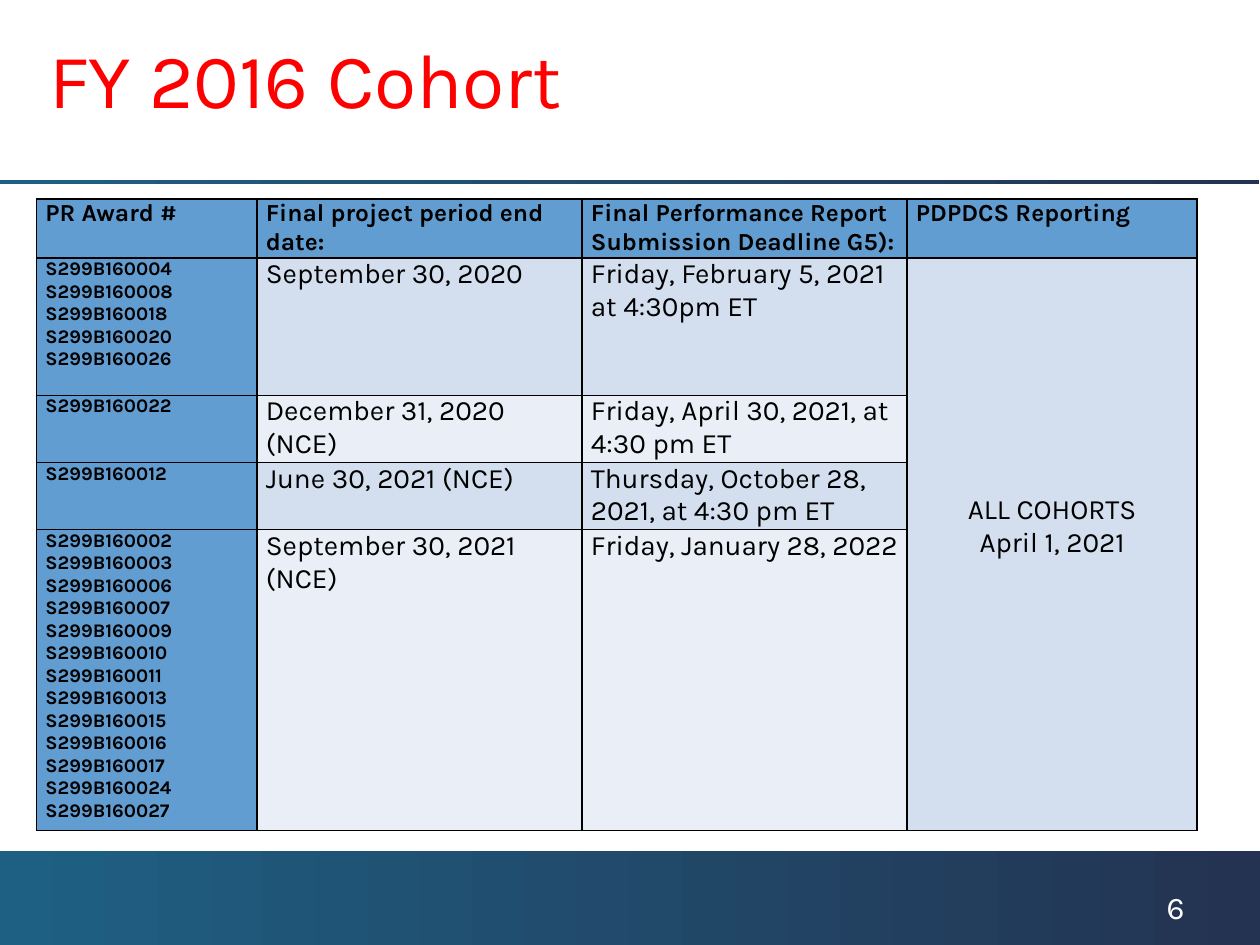
import pptx
import pptx.util
import pptx.dml.color
import pptx.enum.shapes
import pptx.enum.text
import pptx.oxml
import pptx.oxml.ns

Inches, Pt = pptx.util.Inches, pptx.util.Pt
ANCHOR = pptx.enum.text.MSO_ANCHOR
ALIGN = pptx.enum.text.PP_ALIGN

COLORS = {
    "title": "FF0000", "text": "000000", "white": "FFFFFF",
    "teal": "1E6083", "navy": "243352",
    "header": "629DD1", "band_dark": "D3DFEE", "band_light": "EAEFF7",
}


def rgb(name):
    return pptx.dml.color.RGBColor.from_string(COLORS[name])


def awards(*numbers):
    return "\n".join(f"S299B1600{n:02d}" for n in numbers)


class Deck:
    font = "Karla"

    def __init__(self, width, height):
        self.prs = pptx.Presentation()
        self.prs.slide_width, self.prs.slide_height = Inches(width), Inches(height)

    def add_slide(self):
        self.s = self.prs.slides.add_slide(self.prs.slide_layouts[5])

    def set_text(self, tf, text, size, color="text", bold=False, align=ALIGN.LEFT):
        tf.text = text
        tf.word_wrap = True
        for p in tf.paragraphs:
            p.alignment = align
            for r in p.runs:
                r.font.name, r.font.size, r.font.bold = self.font, Pt(size), bold
                r.font.color.rgb = rgb(color)

    def title(self, text, *box):
        sp = self.s.shapes.title
        sp.left, sp.top, sp.width, sp.height = map(Inches, box)
        self.set_text(sp.text_frame, text, 44, "title")
        sp.text_frame.vertical_anchor = ANCHOR.MIDDLE

    def text(self, text, size, color, *box):
        sp = self.s.shapes.add_textbox(*map(Inches, box))
        self.set_text(sp.text_frame, text, size, color)

    def gradient_bar(self, *box):
        sp = self.s.shapes.add_shape(
            pptx.enum.shapes.MSO_SHAPE.RECTANGLE, *map(Inches, box))
        sp.shadow.inherit = False
        sp.line.fill.background()
        sp.fill.gradient()
        sp.fill.gradient_angle = 0
        for stop, name in zip(sp.fill.gradient_stops, ("teal", "navy")):
            stop.color.rgb = rgb(name)

    def table(self, left, top, cols, rows):
        frame = self.s.shapes.add_table(
            len(rows), len(cols), Inches(left), Inches(top),
            Inches(sum(cols)), Inches(sum(rows)))
        table = frame.table
        table.horz_banding = False
        for column, width in zip(table.columns, cols):
            column.width = Inches(width)
        for row, height in zip(table.rows, rows):
            row.height = Inches(height)
        return table

    def cell(self, cell, text, size, fill, bold=False, align=ALIGN.LEFT):
        cell.margin_left = cell.margin_right = Inches(0.07)
        cell.margin_top = cell.margin_bottom = 0
        self.set_text(cell.text_frame, text, size, bold=bold, align=align)
        cell.fill.solid()
        cell.fill.fore_color.rgb = rgb(fill)
        self.borders(cell)

    def borders(self, cell):
        tc_pr = cell._tc.get_or_add_tcPr()
        for i, side in enumerate("LRTB"):
            tc_pr.insert(i, pptx.oxml.parse_xml(
                f'<a:ln{side} {pptx.oxml.ns.nsdecls("a")} w="{Pt(1)}"><a:solidFill>'
                f'<a:srgbClr val="{COLORS["text"]}"/></a:solidFill></a:ln{side}>'))


def main():
    deck = Deck(10, 7.5)
    deck.add_slide()

    # Footer band, title rule, title and page number
    deck.gradient_bar(0, 6.75, 10, 0.75)
    deck.gradient_bar(-0.01, 1.43, 10, 0.03)
    deck.title("FY 2016 Cohort", 0.29, 0.08, 8.92, 1.08)
    deck.text("6", 18, "white", 9.16, 7, 0.58, 0.27)

    # Deadlines table
    headers = ["PR Award #", "Final project period end date:",
               "Final Performance Report Submission Deadline G5):",
               "PDPDCS Reporting"]
    deadlines = [
        (awards(4, 8, 18, 20, 26), "September 30, 2020",
         "Friday, February 5, 2021 at 4:30pm ET"),
        (awards(22), "December 31, 2020 (NCE)",
         "Friday, April 30, 2021, at 4:30 pm ET"),
        (awards(12), "June 30, 2021 (NCE)",
         "Thursday, October 28, 2021, at 4:30 pm ET"),
        (awards(2, 3, 6, 7, 9, 10, 11, 13, 15, 16, 17, 24, 27),
         "September 30, 2021 (NCE)", "Friday, January 28, 2022"),
    ]
    table = deck.table(0.29, 1.58, [1.75, 2.58, 2.58, 2.3],
                       [0.45, 1.09, 0.52, 0.52, 2.32])
    for c, header in enumerate(headers):
        deck.cell(table.cell(0, c), header, 14, "header", bold=True)
    for r, (numbers, *dates) in enumerate(deadlines, 1):
        deck.cell(table.cell(r, 0), numbers, 11, "header", bold=True)
        band = "band_dark" if r % 2 else "band_light"
        for c, date in enumerate(dates, 1):
            deck.cell(table.cell(r, c), date, 16, band)
        if r > 1:
            deck.borders(table.cell(r, 3))

    # Reporting date shared by every cohort, a little above the middle
    shared = table.cell(1, 3)
    shared.merge(table.cell(len(deadlines), 3))
    deck.cell(shared, "ALL COHORTS\nApril 1, 2021", 16, "band_dark",
              align=ALIGN.CENTER)
    shared.vertical_anchor = ANCHOR.MIDDLE
    shared.margin_bottom = Inches(0.27)

    deck.prs.save("out.pptx")


if __name__ == "__main__":
    main()
